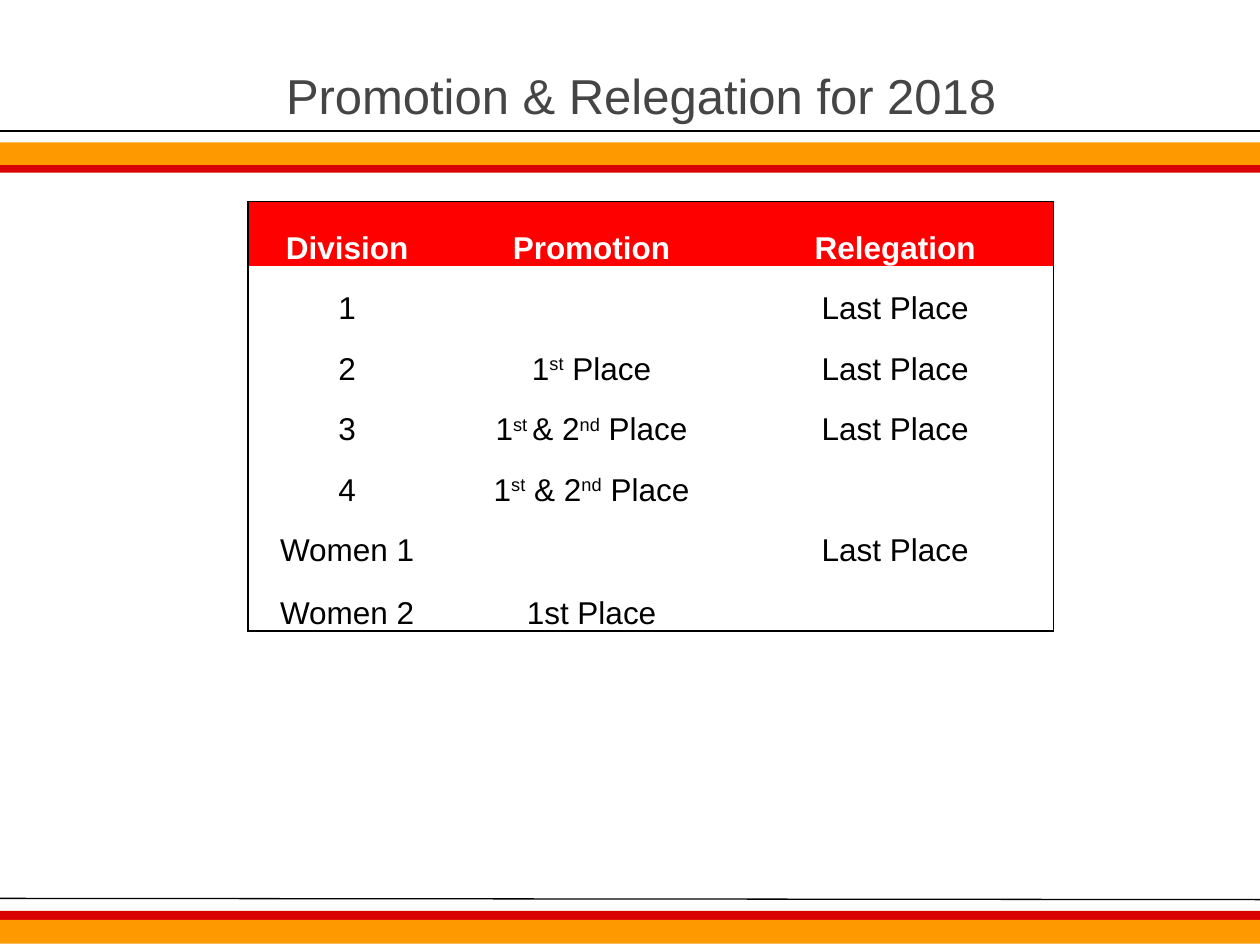
from dataclasses import dataclass

from lxml import etree
from pptx import Presentation
from pptx import util as u
from pptx.dml.color import RGBColor
from pptx.enum import shapes, text
from pptx.oxml import ns

FONT = "Arial"
BLACK, WHITE, GREY = "000000", "FFFFFF", "454545"
RED, DARK_RED, ORANGE = "FF0000", "D80000", "FF9900"


@dataclass
class Band:
    top: float
    height: float
    fill: str


@dataclass
class Rule:
    start: float
    end: float


BANDS = [
    Band(1.28, 0.09, DARK_RED),
    Band(1.13, 0.18, ORANGE),
    Band(7.23, 0.09, DARK_RED),
    Band(7.3, 0.19, ORANGE),
]
RULES = [Rule(1.04, 1.04), Rule(7.13, 7.14)]

COLUMN_WIDTHS = [1.57, 2.31, 2.51]
ROW_HEIGHTS = [0.51] + [0.48] * 5 + [0.5]
ROWS = [
    ("Division", "Promotion", "Relegation"),
    ("1", "", "Last Place"),
    ("2", "1^st^ Place", "Last Place"),
    ("3", "1^st ^& 2^nd^ Place", "Last Place"),
    ("4", "1^st^ & 2^nd^ Place", ""),
    ("Women 1", "", "Last Place"),
    ("Women 2", "1st Place", ""),
]


def color(value: str) -> RGBColor:
    return RGBColor.from_string(value)


def style_font(font, size: float, value: str, bold: bool = False) -> None:
    font.name = FONT
    font.size = u.Pt(size)
    font.bold = bold
    font.color.rgb = color(value)


def add_band(page, band: Band) -> None:
    shape = page.shapes.add_shape(
        shapes.MSO_SHAPE.RECTANGLE,
        0, u.Inches(band.top), u.Inches(10), u.Inches(band.height),
    )
    shape.shadow.inherit = False
    shape.fill.solid()
    shape.fill.fore_color.rgb = color(band.fill)
    shape.line.fill.background()


def add_rule(page, rule: Rule) -> None:
    line = page.shapes.add_connector(
        shapes.MSO_CONNECTOR.STRAIGHT,
        0, u.Inches(rule.start), u.Inches(10), u.Inches(rule.end),
    )
    line.line.color.rgb = color(BLACK)
    line.line.width = u.Pt(0.75)
    etree.SubElement(line._element.spPr, ns.qn("a:effectLst"))


def format_title(page) -> None:
    title = page.shapes.title
    title.left, title.top = u.Inches(2.17), u.Inches(0.24)
    title.width, title.height = u.Inches(7.55), u.Inches(0.79)
    frame = title.text_frame
    frame.text = "Promotion & Relegation for 2018"
    frame.vertical_anchor = text.MSO_ANCHOR.BOTTOM
    para = frame.paragraphs[0]
    para.alignment = text.PP_ALIGN.LEFT
    para.line_spacing = 0.8
    style_font(para.font, 28, GREY)


def set_borders(cell, visible: dict[str, bool]) -> None:
    properties = cell._tc.get_or_add_tcPr()
    for side, shown in visible.items():
        border = etree.SubElement(properties, ns.qn(f"a:ln{side}"), w=str(u.Pt(1)))
        if shown:
            fill = etree.SubElement(border, ns.qn("a:solidFill"))
            etree.SubElement(fill, ns.qn("a:srgbClr"), val=BLACK)
        else:
            etree.SubElement(border, ns.qn("a:noFill"))


def write_cell(cell, content: str, header: bool) -> None:
    cell.vertical_anchor = text.MSO_ANCHOR.BOTTOM
    cell.margin_left = cell.margin_right = cell.margin_top = u.Inches(0.01)
    cell.margin_bottom = 0
    para = cell.text_frame.paragraphs[0]
    para.alignment = text.PP_ALIGN.CENTER
    style_font(para.font, 18, WHITE if header else BLACK, header)
    for index, piece in enumerate(content.split("^")):
        if piece:
            span = para.add_run()
            span.text = piece
            if index % 2:
                span._r.get_or_add_rPr().set("baseline", "30000")


def add_division_table(page) -> None:
    table = page.shapes.add_table(
        len(ROWS), len(COLUMN_WIDTHS), u.Inches(1.97), u.Inches(1.6),
        u.Inches(sum(COLUMN_WIDTHS)), u.Inches(sum(ROW_HEIGHTS)),
    ).table
    table.horz_banding = False
    for column, width in zip(table.columns, COLUMN_WIDTHS):
        column.width = u.Inches(width)
    for row, height in zip(table.rows, ROW_HEIGHTS):
        row.height = u.Inches(height)
    last_row, last_column = len(ROWS) - 1, len(COLUMN_WIDTHS) - 1
    for r, row in enumerate(ROWS):
        for c, content in enumerate(row):
            cell = table.cell(r, c)
            write_cell(cell, content, r == 0)
            set_borders(cell, {
                "L": c == 0, "R": c == last_column,
                "T": r == 0, "B": r == last_row,
            })
            if r == 0:
                cell.fill.solid()
                cell.fill.fore_color.rgb = color(RED)
            else:
                cell.fill.background()


def main() -> None:
    deck = Presentation()
    deck.slide_width, deck.slide_height = u.Inches(10), u.Inches(7.5)
    page = deck.slides.add_slide(deck.slide_layouts[5])
    for band in BANDS:
        add_band(page, band)
    for rule in RULES:
        add_rule(page, rule)
    format_title(page)
    add_division_table(page)
    deck.save("out.pptx")


if __name__ == "__main__":
    main()
